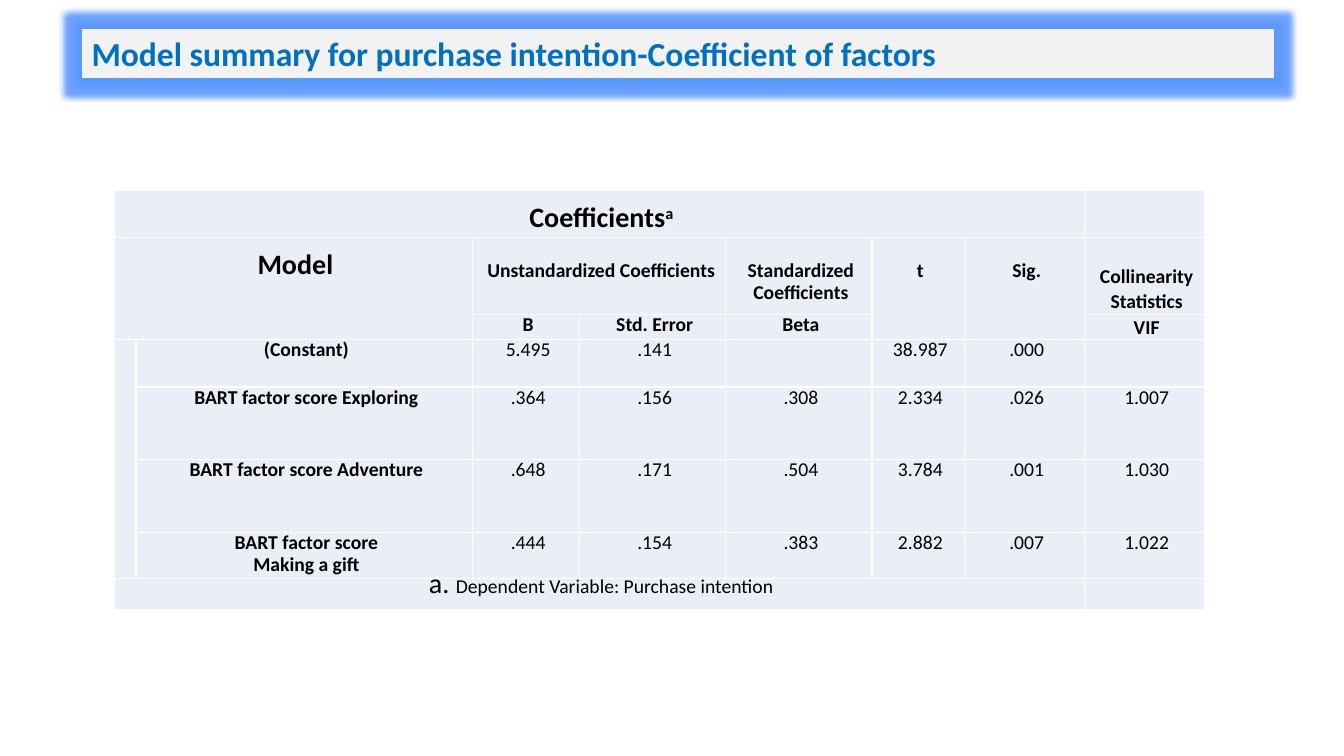
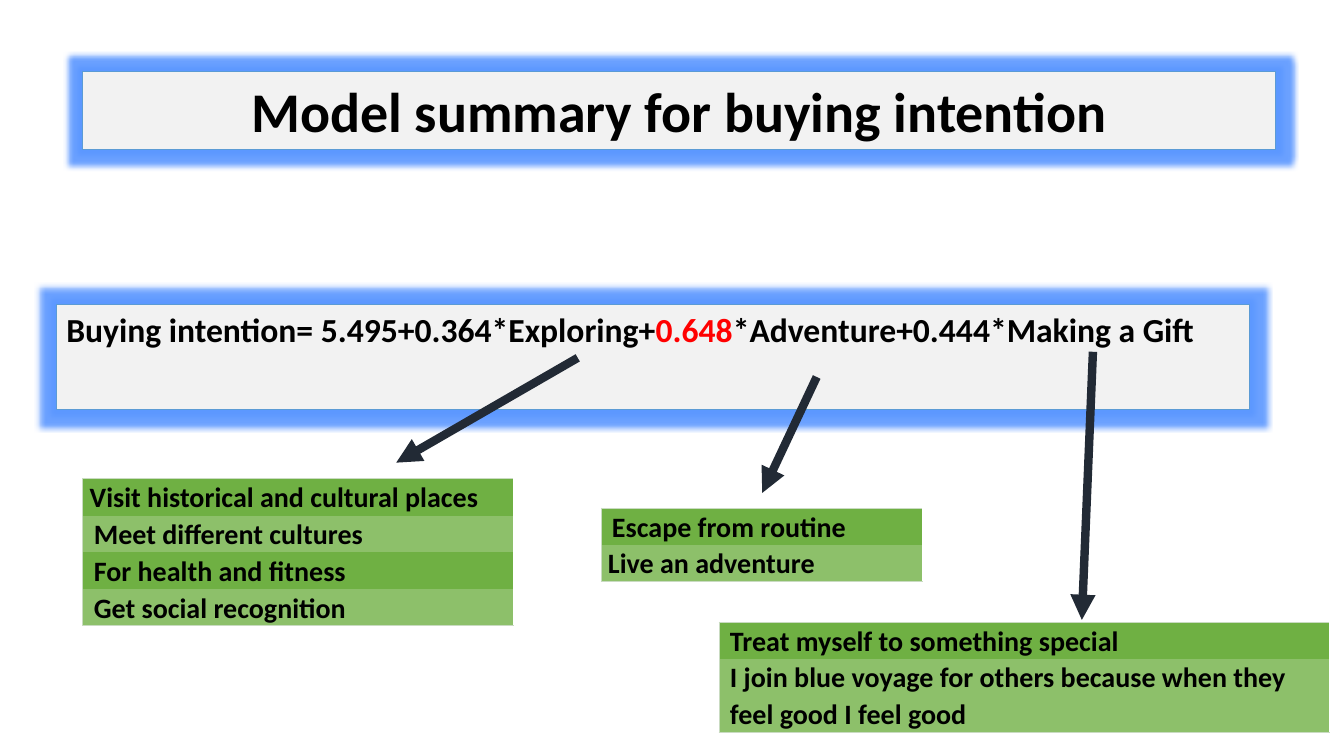
from dataclasses import dataclass
from itertools import product

from lxml.etree import SubElement
from pptx import Presentation
from pptx.dml.color import RGBColor
from pptx.enum.shapes import MSO_CONNECTOR, MSO_SHAPE
from pptx.enum.text import MSO_ANCHOR, PP_ALIGN
from pptx.oxml.ns import qn
from pptx.util import Inches, Pt


@dataclass(frozen=True)
class Theme:
    font: str = "Calibri"
    ink: str = "000000"
    title_blue: str = "0070C0"
    highlight: str = "FF0000"
    panel: str = "F2F2F2"
    panel_line: str = "5B9BD5"
    glow: str = "5B97FF"
    cell: str = "EAEFF7"
    white: str = "FFFFFF"
    green: str = "6FB043"
    green_light: str = "8DC06A"
    green_line: str = "C9DBC1"
    arrow: str = "222A35"
    headline: int = 40
    title: int = 24
    heading: int = 20
    body: int = 14


THEME = Theme()
PANEL_WIDTH = 11.83
LIST_ROW = 0.36


def apply(target, values):
    for name, value in values.items():
        setattr(target, name, value)


def add_run(paragraph, text, size, bold=True, color=THEME.ink, raised=False):
    run = paragraph.add_run()
    run.text = text
    apply(run.font, {"name": THEME.font, "size": Pt(size), "bold": bold})
    run.font.color.rgb = RGBColor.from_string(color)
    if raised:
        run.font._element.set("baseline", "30000")


def write(text_frame, paragraphs, layout):
    for index, runs in enumerate(paragraphs):
        paragraph = text_frame.paragraphs[0] if index == 0 else text_frame.add_paragraph()
        apply(paragraph, layout)
        for run in runs:
            add_run(paragraph, **run)


def glowing_panel(slide, box, runs, alignment=PP_ALIGN.LEFT):
    shape = slide.shapes.add_shape(MSO_SHAPE.RECTANGLE, *map(Inches, box))
    shape.shadow.inherit = False
    shape.fill.solid()
    shape.fill.fore_color.rgb = RGBColor.from_string(THEME.panel)
    shape.line.color.rgb = RGBColor.from_string(THEME.panel_line)
    shape.line.width = Pt(0.75)
    effects = shape._element.spPr.find(qn("a:effectLst"))
    glow = SubElement(effects, qn("a:glow"), rad=str(Pt(8)))
    color = SubElement(glow, qn("a:srgbClr"), val=THEME.glow)
    SubElement(color, qn("a:alpha"), val="90000")
    apply(shape.text_frame, {"word_wrap": True, "vertical_anchor": MSO_ANCHOR.TOP})
    write(shape.text_frame, [runs], {"alignment": alignment})


def style_cell(cell, fill, borders, layout):
    properties = cell._tc.get_or_add_tcPr()
    for side in "LRTB":
        color, width = borders.get(side, (None, 0))
        line = SubElement(properties, qn(f"a:ln{side}"), w=str(Pt(width)))
        if color:
            paint = SubElement(line, qn("a:solidFill"))
            SubElement(paint, qn("a:srgbClr"), val=color)
        else:
            SubElement(line, qn("a:noFill"))
    cell.fill.solid()
    cell.fill.fore_color.rgb = RGBColor.from_string(fill)
    apply(cell, layout)


def add_grid(slide, left, top, widths, heights):
    frame = slide.shapes.add_table(
        len(heights), len(widths), Inches(left), Inches(top),
        Inches(sum(widths)), Inches(sum(heights)),
    )
    table = frame.table
    apply(table, {"first_row": False, "horz_banding": False})
    for column, width in zip(table.columns, widths):
        column.width = Inches(width)
    for row, height in zip(table.rows, heights):
        row.height = Inches(height)
    return table


def coefficients_table(slide, left, top):
    widths = [0.18, 3.34, 1.06, 1.45, 1.45, 0.92, 1.19, 1.19]
    heights = [0.47, 0.75, 0.25, 0.47, 0.72, 0.72, 0.46, 0.25]
    table = add_grid(slide, left, top, widths, heights)
    fixed = {"alignment": PP_ALIGN.CENTER, "line_spacing": Pt(16)}
    loose = {"alignment": PP_ALIGN.CENTER, "line_spacing": 1.07}
    margins = {
        "margin_left": Inches(0.11), "margin_right": Inches(0.07),
        "margin_top": 0, "margin_bottom": 0,
    }
    borders = dict.fromkeys("LRTB", (THEME.white, 1))
    for row, column in product(range(len(heights)), range(len(widths))):
        cell = table.cell(row, column)
        style_cell(cell, THEME.cell, borders, margins)
        apply(cell.text_frame.paragraphs[0], fixed)

    spans = [
        (0, 0, 0, 6), (1, 0, 2, 1), (1, 2, 1, 3), (1, 5, 2, 5),
        (1, 6, 2, 6), (3, 0, 6, 0), (7, 0, 7, 6),
    ]
    for first_row, first_column, last_row, last_column in spans:
        table.cell(first_row, first_column).merge(table.cell(last_row, last_column))

    headings = [
        (0, 0, "Coefficients", THEME.heading, 0.22, fixed),
        (1, 0, "Model", THEME.heading, 0.22, fixed),
        (1, 2, "Unstandardized Coefficients", THEME.body, 0.22, fixed),
        (1, 4, "Standardized Coefficients", THEME.body, 0.22, fixed),
        (1, 5, "t", THEME.body, 0.22, fixed),
        (1, 6, "Sig.", THEME.body, 0.22, fixed),
        (1, 7, "Collinearity Statistics", THEME.body, 0.25, loose),
        (2, 2, "B", THEME.body, 0, fixed),
        (2, 3, "Std. Error", THEME.body, 0, fixed),
        (2, 4, "Beta", THEME.body, 0, fixed),
        (2, 7, "VIF", THEME.body, 0, loose),
    ]
    for row, column, text, size, margin, layout in headings:
        cell = table.cell(row, column)
        cell.margin_top = Inches(margin)
        write(cell.text_frame, [[{"text": text, "size": size}]], layout)
    add_run(table.cell(0, 0).text_frame.paragraphs[0], "a", THEME.heading, raised=True)

    factors = [
        (["(Constant)"], ["5.495", ".141", "", "38.987", ".000", ""]),
        (["BART factor score Exploring"], [".364", ".156", ".308", "2.334", ".026", "1.007"]),
        (["BART factor score Adventure"], [".648", ".171", ".504", "3.784", ".001", "1.030"]),
        (["BART factor score", "Making a gift"], [".444", ".154", ".383", "2.882", ".007", "1.022"]),
    ]
    for row, (label, values) in enumerate(factors, start=3):
        lines = [[{"text": text, "size": THEME.body}] for text in label]
        write(table.cell(row, 1).text_frame, lines, fixed)
        for column, value in enumerate(values, start=2):
            if value:
                run = {"text": value, "size": THEME.body, "bold": False}
                write(table.cell(row, column).text_frame, [[run]], fixed)

    footnote = [
        {"text": "a. ", "size": THEME.heading, "bold": False},
        {"text": "Dependent Variable: Purchase intention", "size": THEME.body, "bold": False},
    ]
    write(table.cell(7, 0).text_frame, [footnote], fixed)


def factor_list(slide, left, top, width, items):
    heights = [LIST_ROW * lines for _, _, lines in items]
    table = add_grid(slide, left, top, [width], heights)
    for index, (text, margin, _) in enumerate(items):
        borders = {"L": (THEME.green_line, 0.5), "R": (THEME.white, 1)}
        if index == 0:
            borders["T"] = (THEME.green_line, 0.5)
        if index == len(items) - 1:
            borders["B"] = (THEME.green_line, 0.5)
        cell = table.cell(index, 0)
        style_cell(cell, THEME.green_light if index % 2 else THEME.green, borders, {
            "margin_left": Inches(margin), "margin_right": Inches(0.07),
            "margin_top": 0, "margin_bottom": 0, "vertical_anchor": MSO_ANCHOR.MIDDLE,
        })
        write(cell.text_frame, [[{"text": text, "size": THEME.heading}]], {"line_spacing": 1.07})


def arrow(slide, start, end):
    connector = slide.shapes.add_connector(
        MSO_CONNECTOR.STRAIGHT, *map(Inches, (*start, *end))
    )
    connector.line.color.rgb = RGBColor.from_string(THEME.arrow)
    connector.line.width = Pt(6)
    SubElement(connector.line._get_or_add_ln(), qn("a:tailEnd"), type="triangle")
    SubElement(connector._element.spPr, qn("a:effectLst"))


def coefficients_slide(slide):
    title = {
        "text": "Model summary for purchase intention-Coefficient of factors",
        "size": THEME.title, "color": THEME.title_blue,
    }
    glowing_panel(slide, (0.81, 0.28, PANEL_WIDTH, 0.5), [title])
    coefficients_table(slide, 1.13, 1.89)


def equation_slide(slide):
    title = {"text": "Model summary for buying intention", "size": THEME.headline}
    glowing_panel(slide, (0.82, 0.71, PANEL_WIDTH, 0.77), [title], PP_ALIGN.CENTER)
    equation = [
        {"text": "Buying intention= 5.495+0.364*Exploring+", "size": THEME.title},
        {"text": "0.648", "size": THEME.title, "color": THEME.highlight},
        {"text": "*Adventure+0.444*Making a Gift", "size": THEME.title},
    ]
    glowing_panel(slide, (0.56, 3.02, PANEL_WIDTH, 1.04), equation)

    flush, indented = 0.07, 0.11
    factors = [
        ((0.82, 4.75, 4.27), (5.73, 3.55), (3.93, 4.59), [
            ("Visit historical and cultural places", flush, 1),
            ("Meet different cultures", indented, 1),
            ("For health and fitness", indented, 1),
            ("Get social recognition", indented, 1),
        ]),
        ((5.96, 5.04, 3.19), (8.1, 3.74), (7.56, 4.89), [
            ("Escape from routine", indented, 1),
            ("Live an adventure", flush, 1),
        ]),
        ((7.13, 6.17, 6.06), (10.84, 3.49), (10.73, 6.15), [
            ("Treat myself to something special", indented, 1),
            ("I join blue voyage for others because when they feel good I feel good", indented, 2),
        ]),
    ]
    for box, start, end, items in factors:
        factor_list(slide, *box, items)
        arrow(slide, start, end)


def main():
    presentation = Presentation()
    apply(presentation, {"slide_width": Inches(13.33), "slide_height": Inches(7.5)})
    for build in (coefficients_slide, equation_slide):
        build(presentation.slides.add_slide(presentation.slide_layouts[6]))
    presentation.save("out.pptx")


if __name__ == "__main__":
    main()
